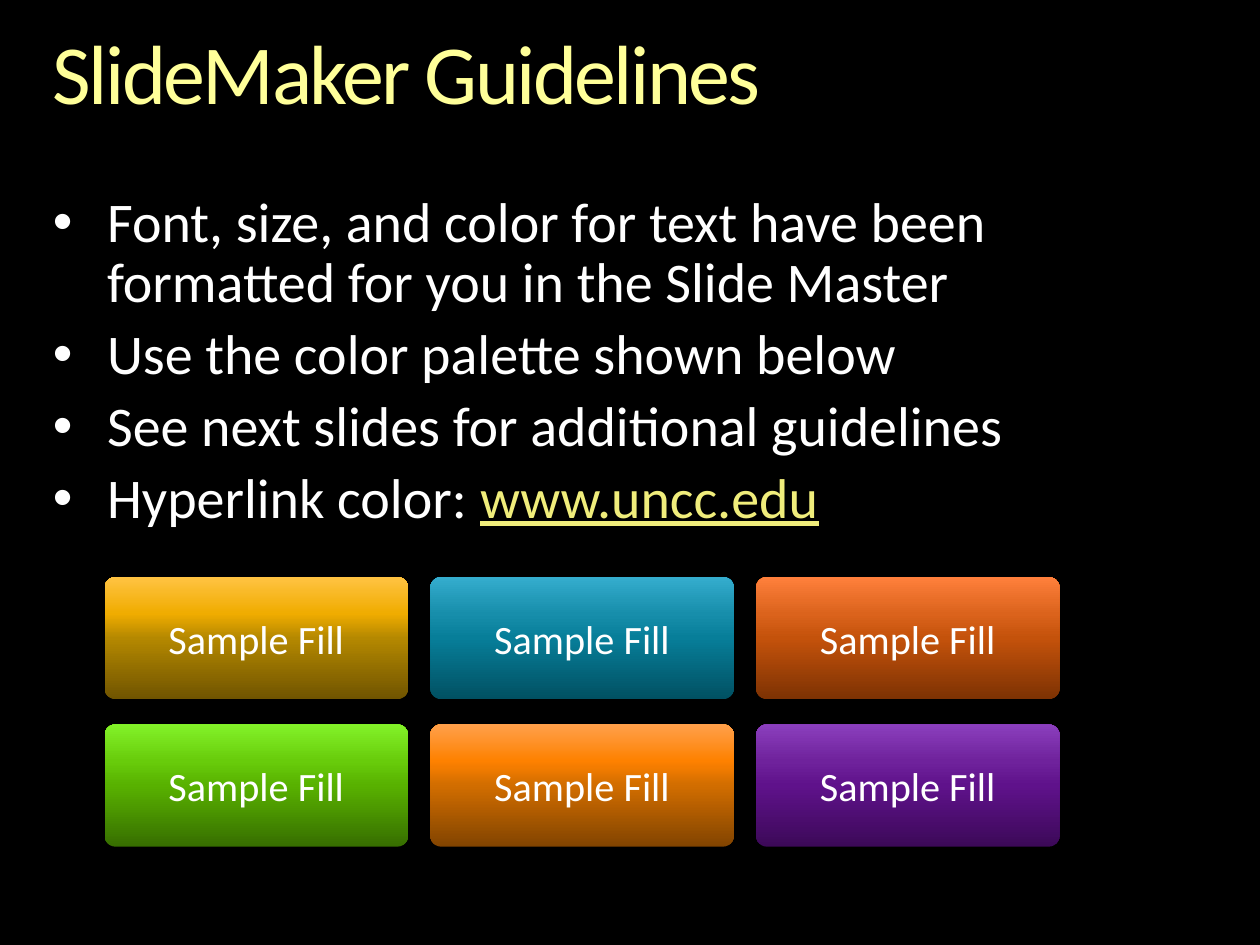
from dataclasses import dataclass

from lxml import etree
from pptx import Presentation
from pptx import util as u
from pptx.dml.color import RGBColor
from pptx.enum import shapes, text
from pptx.oxml.ns import qn


@dataclass(frozen=True)
class Theme:
    font: str = "Calibri"
    background: str = "000000"
    body: str = "FFFFFF"
    link: str = "F0ED7B"
    title_stops: tuple = ((0, "FFFFB9"), (36, "FFFF99"), (86, "F6AE1E"))
    title_size: int = 48
    body_size: int = 32
    sample_size: int = 23


@dataclass(frozen=True)
class Sample:
    column: int
    row: int
    shades: tuple  # bottom to top


@dataclass(frozen=True)
class Grid:
    left: float = 0.83
    top: float = 4.58
    width: float = 2.41
    height: float = 0.97
    column_step: float = 2.585
    row_step: float = 1.17


THEME = Theme()
GRID = Grid()
MARGIN, CONTENT_WIDTH = 0.42, 9.17
SHADE_POSITIONS = (0, 50, 70, 100)
SAMPLES = (
    Sample(0, 0, ("705400", "B48800", "F0AC00", "FFC342")),
    Sample(1, 0, ("015062", "077E99", "178EAB", "35ADCE")),
    Sample(2, 0, ("7D3203", "C4520B", "DB631C", "FF803C")),
    Sample(0, 1, ("376E00", "58B100", "68CC0B", "83F229")),
    Sample(1, 1, ("824400", "D16D00", "FE8100", "FFA04B")),
    Sample(2, 1, ("3C0958", "5F128B", "6F229C", "8B3FBD")),
)
GUIDELINES = (
    ("Font, size, and color for text have been formatted for you in the Slide Master", ""),
    ("Use the color palette shown below", ""),
    ("See next slides for additional guidelines", ""),
    ("Hyperlink color: ", "www.uncc.edu"),
)


def set_gradient(fill, owner, stops, angle: int) -> None:
    """Fill with any number of stops; angle runs counter-clockwise."""
    fill.gradient()
    fill.gradient_angle = angle
    stop_list = next(owner.iter(qn("a:gsLst")))
    for old_stop in list(stop_list):
        stop_list.remove(old_stop)
    for position, color in stops:
        stop = etree.SubElement(stop_list, qn("a:gs"), pos=str(position * 1000))
        etree.SubElement(stop, qn("a:srgbClr"), val=color)


def set_font(font, size: int, color: str) -> None:
    font.name = THEME.font
    font.size = u.Pt(size)
    font.color.rgb = RGBColor.from_string(color)


def clear_frame(frame) -> None:
    frame.word_wrap = True
    frame.vertical_anchor = text.MSO_ANCHOR.TOP
    frame.margin_left = frame.margin_right = frame.margin_top = frame.margin_bottom = 0


def add_title(slide, wording: str) -> None:
    title = slide.shapes.title
    title.left, title.top = u.Inches(MARGIN), u.Inches(0.25)
    title.width, title.height = u.Inches(CONTENT_WIDTH), u.Inches(0.73)
    clear_frame(title.text_frame)
    title.text_frame.auto_size = text.MSO_AUTO_SIZE.NONE
    paragraph = title.text_frame.paragraphs[0]
    paragraph.alignment = text.PP_ALIGN.LEFT
    paragraph.line_spacing = 0.9
    heading = paragraph.add_run()
    heading.text = wording
    heading.font.name = THEME.font
    heading.font.size = u.Pt(THEME.title_size)
    properties = heading.font.fill and heading._r.get_or_add_rPr()
    properties.set("spc", "-150")
    set_gradient(heading.font.fill, properties, THEME.title_stops, 270)


def add_guidelines(slide) -> None:
    box = slide.shapes.add_textbox(
        u.Inches(MARGIN), u.Inches(1.54), u.Inches(CONTENT_WIDTH), u.Inches(2.75))
    frame = box.text_frame
    clear_frame(frame)
    for index, (wording, address) in enumerate(GUIDELINES):
        paragraph = frame.add_paragraph() if index else frame.paragraphs[0]
        properties = paragraph._p.get_or_add_pPr()
        properties.set("marL", str(u.Inches(0.43)))
        properties.set("indent", str(-u.Inches(0.43)))
        etree.SubElement(properties, qn("a:buFont"), typeface="Arial")
        etree.SubElement(properties, qn("a:buChar"), char="•")
        paragraph.line_spacing = 0.9
        if index:
            paragraph.space_before = u.Pt(0.2 * THEME.body_size)
        set_font(paragraph.font, THEME.body_size, THEME.body)
        paragraph.add_run().text = wording
        if address:
            link = paragraph.add_run()
            link.text = address
            link.font.color.rgb = RGBColor.from_string(THEME.link)
            link.font.underline = True


def add_sample(slide, sample: Sample) -> None:
    button = slide.shapes.add_shape(
        shapes.MSO_SHAPE.ROUNDED_RECTANGLE,
        u.Inches(GRID.left + sample.column * GRID.column_step),
        u.Inches(GRID.top + sample.row * GRID.row_step),
        u.Inches(GRID.width), u.Inches(GRID.height))
    button.adjustments[0] = 0.09
    button.shadow.inherit = False
    button.line.fill.background()
    set_gradient(button.fill, button._element, zip(SHADE_POSITIONS, sample.shades), 90)
    button.text_frame.vertical_anchor = text.MSO_ANCHOR.MIDDLE
    paragraph = button.text_frame.paragraphs[0]
    paragraph.text = "Sample Fill"
    paragraph.alignment = text.PP_ALIGN.CENTER
    set_font(paragraph.font, THEME.sample_size, THEME.body)


def main() -> None:
    deck = Presentation()
    deck.slide_width, deck.slide_height = u.Inches(10), u.Inches(7.5)
    slide = deck.slides.add_slide(deck.slide_layouts[5])
    slide.background.fill.solid()
    slide.background.fill.fore_color.rgb = RGBColor.from_string(THEME.background)
    add_title(slide, "SlideMaker Guidelines")
    add_guidelines(slide)
    for sample in SAMPLES:
        add_sample(slide, sample)
    deck.save("out.pptx")


if __name__ == "__main__":
    main()
